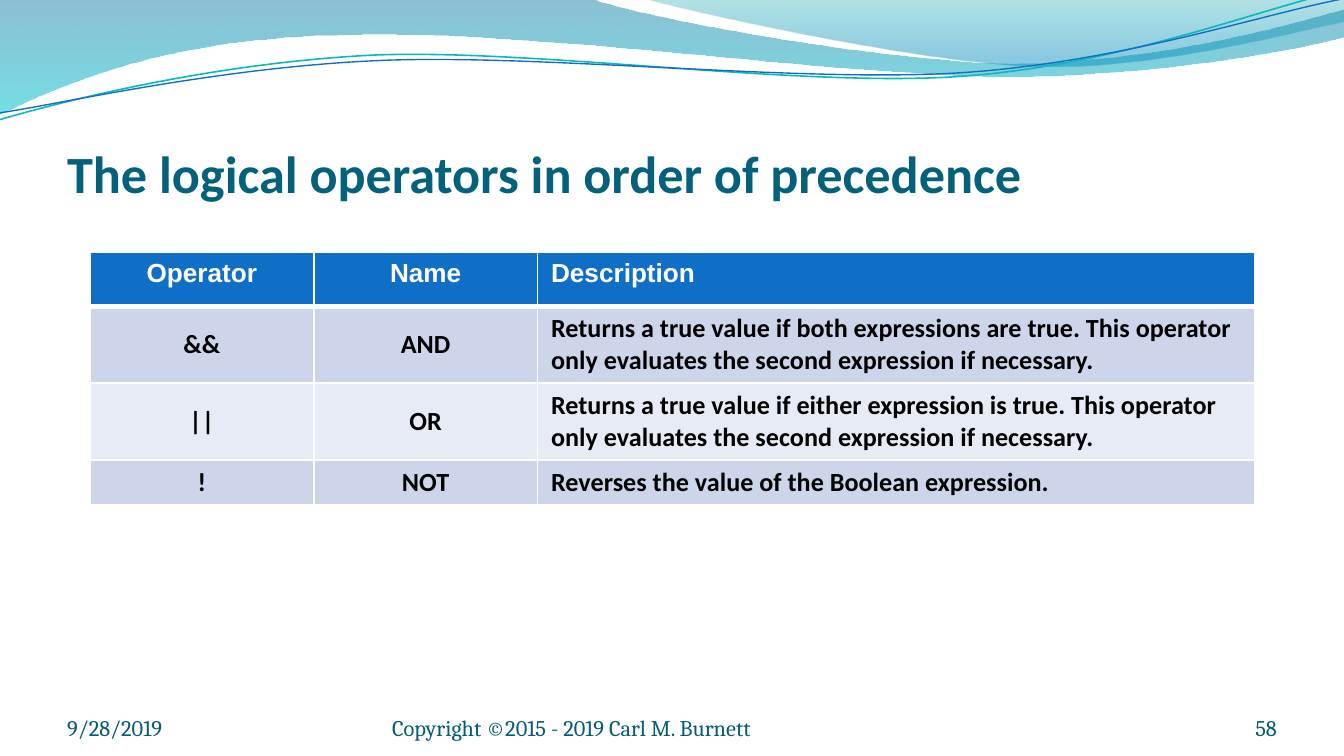
from math import cos, radians, sin

from lxml.etree import SubElement
from pptx import Presentation
from pptx.dml.color import RGBColor
from pptx.enum.text import MSO_ANCHOR, PP_ALIGN
from pptx.oxml import parse_xml
from pptx.oxml.ns import nsdecls, qn
from pptx.util import Cm, Pt

# Content
TITLE = "The logical operators in order of precedence"
HEADINGS = ("Operator", "Name", "Description")
OPERATORS = [
    ("&&", "AND", "Returns a true value if both expressions are true. "
     "This operator only evaluates the second expression if necessary."),
    ("||", "OR", "Returns a true value if either expression is true. "
     "This operator only evaluates the second expression if necessary."),
    ("!", "NOT", "Reverses the value of the Boolean expression."),
]
# text, left, width, alignment
FOOTERS = [
    ("9/28/2019", 1.27, 5.92, PP_ALIGN.LEFT),
    ("Copyright ©2015 - 2019 Carl M. Burnett", 7.41, 9.32, PP_ALIGN.LEFT),
    ("58", 22.01, 2.12, PP_ALIGN.RIGHT),
]

THEME = {
    "title": ("Calibri", 28, "04617B"),
    "footer": ("Cambria", 12, "045D75"),
    "heading": ("Arial", 14, "FFFFFF"),
    "body": ("Calibri", 14, "000000"),
    "heading_fill": "0F6FC6",
    "band_fills": ("CCD5EA", "E7EBF5"),
    "border": "FFFFFF",
}

# Waves, in tenths of the slide width: two numbers make a straight
# segment, six numbers make a Bezier segment
BANDS = [
    {"start": (0, 0),
     "segments": [(4.4, -0.01), (4.76, 0.13, 6.64, 0.47, 7.58, 0.47),
                  (8.53, 0.47, 9.58, 0.19, 10, 0.07), (10.01, 0.27),
                  (9.83, 0.33, 8.7, 0.57, 7.46, 0.57),
                  (6.22, 0.56, 3.82, 0.21, 2.57, 0.26),
                  (1.29, 0.27, 0.46, 0.62, -0.01, 0.85)],
     "stops": [(0, "0074A1", 45), (1, "00C6CF", 55)]},
    {"start": (4.79, -0.01),
     "segments": [(5.09, 0.08, 6.82, 0.46, 7.69, 0.49),
                  (8.56, 0.52, 9.61, 0.24, 10, 0.16), (10, 0)],
     "stops": [(0, "00A1A9", 30), (0.8, "008BBF", 45)]},
]
STRANDS = [
    {"start": (0, 0.89),
     "segments": [(0.48, 0.75, 1.58, 0.47, 2.77, 0.41),
                  (3.96, 0.36, 5.92, 0.65, 7.12, 0.57),
                  (8.33, 0.49, 9.39, 0.06, 9.98, -0.07)],
     "center": (4.99, 0.43), "line": ("0AB8BF", 0.85)},
    {"start": (0, 0.84),
     "segments": [(0.47, 0.77, 1.64, 0.5, 2.83, 0.45),
                  (4.03, 0.4, 5.97, 0.62, 7.17, 0.54),
                  (8.36, 0.46, 9.41, 0.1, 10, -0.01)],
     "center": (5, 0.44), "line": ("0F6FC6", 0.75)},
]
WAVE_UNIT = Cm(2.54)
STRAND_TILT = -2.7


def rgb(code):
    return RGBColor.from_string(code)


def turn(point, center, degrees):
    angle = radians(degrees)
    dx, dy = point[0] - center[0], point[1] - center[1]
    return (center[0] + dx * cos(angle) - dy * sin(angle),
            center[1] + dx * sin(angle) + dy * cos(angle))


def add_wave(slide, wave, close, tilt=0):
    """Draw an outline whose six-number segments are Bezier curves."""
    points = [wave["start"]]
    for segment in wave["segments"]:
        points += zip(segment[::2], segment[1::2])
    if tilt:
        points = [turn(point, wave["center"], -tilt) for point in points]
    points = [(round(x * WAVE_UNIT), round(y * WAVE_UNIT)) for x, y in points]
    builder = slide.shapes.build_freeform(*points[0])
    builder.add_line_segments(points[1:], close=close)
    outline = builder.convert_to_shape()
    outline.shadow.inherit = False
    outline.rotation = tilt

    # Merge the three steps of each curve into one Bezier segment
    steps = iter(list(outline._element.spPr.iter(qn("a:lnTo"))))
    for segment in wave["segments"]:
        first = next(steps)
        if len(segment) == 6:
            first.tag = qn("a:cubicBezTo")
            for step in (next(steps), next(steps)):
                first.append(step[0])
                step.getparent().remove(step)
    return outline


def style(paragraph, role, bold, align=PP_ALIGN.LEFT):
    name, size, color = THEME[role]
    font = paragraph.font
    font.name, font.size, font.bold = name, Pt(size), bold
    font.color.rgb = rgb(color)
    paragraph.alignment = align


def add_text(slide, text, box, role, bold=False, align=PP_ALIGN.LEFT, top_inset=0):
    frame = slide.shapes.add_textbox(*map(Cm, box)).text_frame
    frame.word_wrap = True
    frame.vertical_anchor = MSO_ANCHOR.BOTTOM
    frame.margin_left = frame.margin_right = frame.margin_bottom = 0
    frame.margin_top = Cm(top_inset)
    frame.text = text
    style(frame.paragraphs[0], role, bold, align)


def set_borders(cell, top, bottom):
    properties = cell._tc.get_or_add_tcPr()
    widths = {"lnL": 1, "lnR": 1, "lnT": top, "lnB": bottom}
    for position, (side, width) in enumerate(widths.items()):
        properties.insert(position, parse_xml(
            f'<a:{side} {nsdecls("a")} w="{Pt(width)}"><a:solidFill>'
            f'<a:srgbClr val="{THEME["border"]}"/></a:solidFill></a:{side}>'))


deck = Presentation()
deck.slide_width, deck.slide_height = Cm(25.4), Cm(14.29)
slide = deck.slides.add_slide(deck.slide_layouts[6])

# Header waves: shaded bands, then thin strands
for wave in BANDS:
    band = add_wave(slide, wave, close=True)
    band.line.fill.background()
    band.fill.gradient()
    band.fill.gradient_angle = 270
    for stop, (position, color, _) in zip(band.fill.gradient_stops, wave["stops"]):
        stop.position = position
        stop.color.rgb = rgb(color)
    colors = list(band._element.spPr.iter(qn("a:srgbClr")))
    for color, (_, _, opacity) in zip(colors, wave["stops"]):
        SubElement(color, qn("a:alpha"), val=str(opacity * 1000))
for wave in STRANDS:
    strand = add_wave(slide, wave, close=False, tilt=STRAND_TILT)
    strand.fill.background()
    color, width = wave["line"]
    strand.line.color.rgb = rgb(color)
    strand.line.width = Pt(width)

# Title and footer
add_text(slide, TITLE, (1.27, 1.47, 22.86, 2.39), "title", bold=True, top_inset=0.13)
for text, left, width, align in FOOTERS:
    add_text(slide, text, (left, 13.24, width, 0.76), "footer", align=align)

# Operator table
column_widths = (4.23, 4.23, 13.55)
row_heights = (1.02, 1.45, 1.45, 0.86)
operator_table = slide.shapes.add_table(
    len(row_heights), len(column_widths), Cm(1.7), Cm(4.77),
    Cm(sum(column_widths)), Cm(sum(row_heights))).table
for column, width in zip(operator_table.columns, column_widths):
    column.width = Cm(width)
for row, height in zip(operator_table.rows, row_heights):
    row.height = Cm(height)

for r, entries in enumerate([HEADINGS, *OPERATORS]):
    heading = r == 0
    fill = THEME["heading_fill"] if heading else THEME["band_fills"][(r - 1) % 2]
    for c, entry in enumerate(entries):
        description = c == 2
        cell = operator_table.cell(r, c)
        cell.text = entry
        cell.fill.solid()
        cell.fill.fore_color.rgb = rgb(fill)
        set_borders(cell, top=3 if r == 1 else 1, bottom=3 if heading else 1)
        cell.vertical_anchor = (MSO_ANCHOR.TOP if heading or description
                                else MSO_ANCHOR.MIDDLE)
        paragraph = cell.text_frame.paragraphs[0]
        style(paragraph, "heading" if heading else "body", True,
              PP_ALIGN.LEFT if description else PP_ALIGN.CENTER)
        if heading:
            paragraph.space_before = paragraph.space_after = Pt(6)

deck.save("out.pptx")
